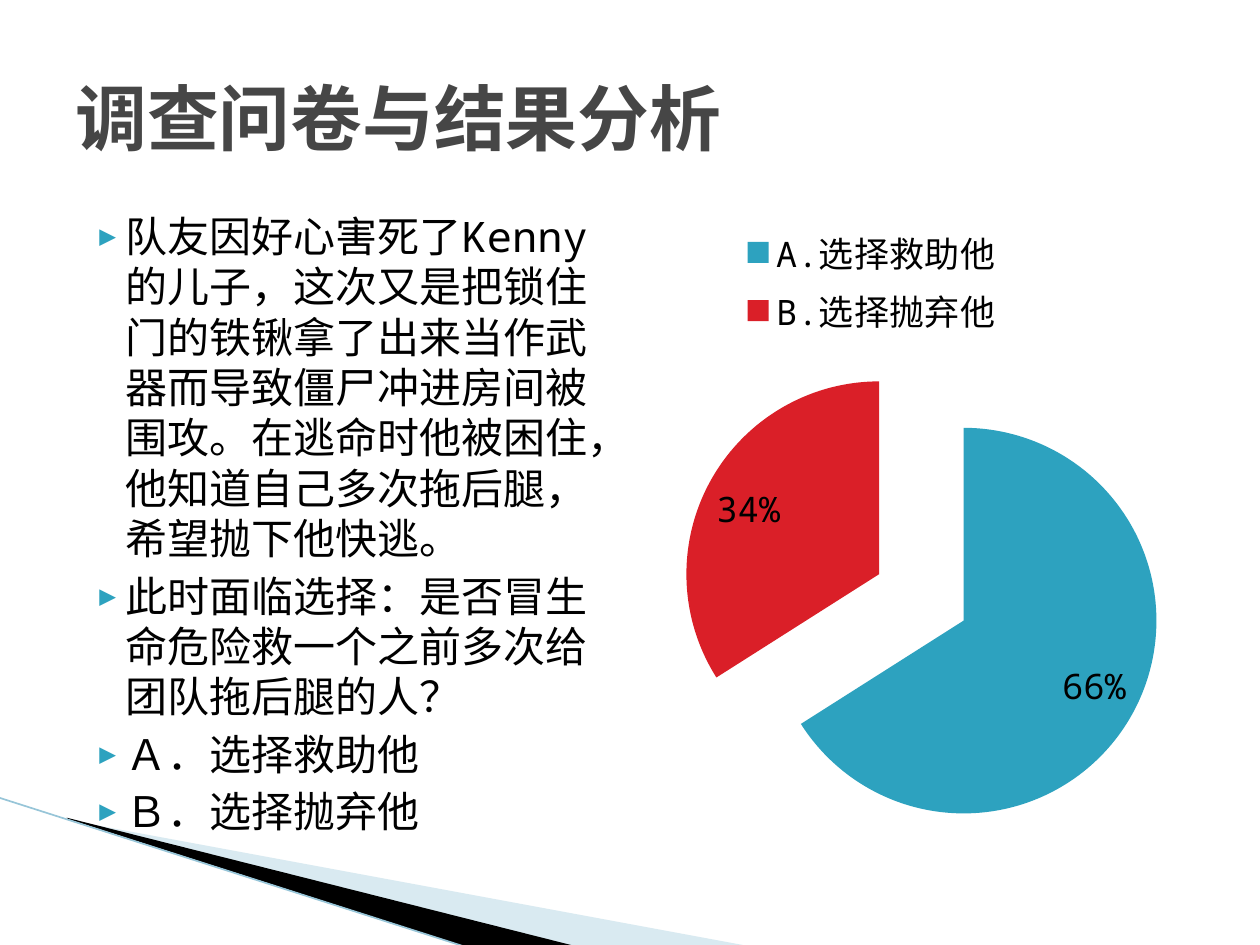
from lxml import etree
from pptx import Presentation
from pptx.chart.data import CategoryChartData
from pptx.dml.color import RGBColor
from pptx.enum.chart import XL_CHART_TYPE, XL_LABEL_POSITION, XL_LEGEND_POSITION
from pptx.enum.shapes import MSO_CONNECTOR
from pptx.enum.text import MSO_ANCHOR
from pptx.oxml import parse_xml
from pptx.oxml.ns import nsdecls, qn
from pptx.util import Inches, Pt

PIE = XL_CHART_TYPE.PIE
LEGEND_TOP = XL_LEGEND_POSITION.TOP
LABEL_INSIDE = XL_LABEL_POSITION.INSIDE_END
STRAIGHT = MSO_CONNECTOR.STRAIGHT
MIDDLE, TOP = MSO_ANCHOR.MIDDLE, MSO_ANCHOR.TOP

FONT = "Noto Sans Mono"
COLORS = {
    "title": "464646",
    "text": "000000",
    "teal": "2DA2BF",
    "red": "DA1F28",
    "wedge": "A0CBDC",
    "edge": "97C5D8",
}
BODY = [
    "队友因好心害死了Kenny的儿子，这次又是把锁住门的铁锹拿了出来当作武器而导致僵尸冲进房间被围攻。"
    "在逃命时他被困住，他知道自己多次拖后腿，希望抛下他快逃。",
    "此时面临选择：是否冒生命危险救一个之前多次给团队拖后腿的人？",
    "Ａ．选择救助他",
    "Ｂ．选择抛弃他",
]
ANSWERS = {"A.选择救助他": 66, "B.选择抛弃他": 34}


def rgb(name):
    return RGBColor.from_string(COLORS[name])


def style_font(font, size, color, bold=False):
    font.name, font.size, font.bold = FONT, Pt(size), bold
    font.color.rgb = rgb(color)


def add_text_box(page, left, top, width, height, anchor):
    box = page.shapes.add_textbox(*map(Inches, (left, top, width, height)))
    box.text_frame.word_wrap = True
    box.text_frame.vertical_anchor = anchor
    return box.text_frame


def add_span(para, text, size, color, bold=False):
    span = para.add_run()
    span.text = text
    style_font(span.font, size, color, bold)
    east_asian = etree.SubElement(span.font._element, qn("a:ea"))
    east_asian.set("typeface", FONT)


def add_bullet(para):
    props = para._p.get_or_add_pPr()
    props.set("marL", str(Inches(0.4)))
    props.set("indent", str(Inches(-0.28)))
    color = etree.SubElement(props, qn("a:buClr"))
    etree.SubElement(color, qn("a:srgbClr")).set("val", COLORS["teal"])
    etree.SubElement(props, qn("a:buSzPct")).set("val", "68000")
    etree.SubElement(props, qn("a:buFont")).set("typeface", FONT)
    etree.SubElement(props, qn("a:buChar")).set("char", "▶")


def add_wedge(page, points, color, opacity=100):
    first, *others = [(Inches(x), Inches(y)) for x, y in points]
    builder = page.shapes.build_freeform(*first)
    builder.add_line_segments(others, close=True)
    wedge = builder.convert_to_shape()
    wedge.shadow.inherit = False
    wedge.fill.solid()
    wedge.fill.fore_color.rgb = rgb(color)
    wedge.line.fill.background()
    if opacity < 100:
        fill_color = wedge._element.spPr.find(".//" + qn("a:srgbClr"))
        etree.SubElement(fill_color, qn("a:alpha")).set("val", str(opacity * 1000))


def add_edge(page, start, end, color, width):
    edge = page.shapes.add_connector(STRAIGHT, *map(Inches, (*start, *end)))
    edge.line.color.rgb = rgb(color)
    edge.line.width = Pt(width)
    etree.SubElement(edge._element.spPr, qn("a:effectLst"))


def make_layout(left, top, width, height, inner=False):
    """Manual chart layout, in fractions of the chart area."""
    target = '<c:layoutTarget val="inner"/>' if inner else ""
    return parse_xml(
        f'<c:layout {nsdecls("c")}><c:manualLayout>{target}'
        '<c:xMode val="edge"/><c:yMode val="edge"/>'
        f'<c:x val="{left}"/><c:y val="{top}"/>'
        f'<c:w val="{width}"/><c:h val="{height}"/>'
        "</c:manualLayout></c:layout>"
    )


def add_pie(page, left, top, width, height):
    data = CategoryChartData()
    data.categories = list(ANSWERS)
    data.add_series("Series 1", list(ANSWERS.values()))
    frame = page.shapes.add_chart(PIE, *map(Inches, (left, top, width, height)), data)
    chart = frame.chart
    chart.has_title = False
    style_font(chart.font, 18, "text")

    # Slices, pulled apart
    plot = chart.plots[0]
    plot.vary_by_categories = True
    series = plot.series[0]
    for index, color in enumerate(("teal", "red")):
        fill = series.points[index].format.fill
        fill.solid()
        fill.fore_color.rgb = rgb(color)
    explosion = parse_xml(f'<c:explosion {nsdecls("c")} val="25"/>')
    series._element.find(qn("c:dPt")).addprevious(explosion)

    # Percent labels
    plot.has_data_labels = True
    labels = plot.data_labels
    labels.show_percentage = True
    labels.show_value = False
    labels.position = LABEL_INSIDE
    style_font(labels.font, 20, "text")

    # Legend stacked above the pie
    chart.has_legend = True
    legend = chart.legend
    legend.position = LEGEND_TOP
    legend.include_in_layout = False
    style_font(legend.font, 20, "text")
    for old in legend._element.findall(qn("c:layout")):
        legend._element.remove(old)
    legend._element.find(qn("c:legendPos")).addnext(make_layout(0.17, 0.02, 0.5, 0.19))

    area = chart._chartSpace.chart.plotArea
    for old in area.findall(qn("c:layout")):
        area.remove(old)
    area.insert(0, make_layout(0.09, 0.23, 0.83, 0.74, inner=True))


def main():
    deck = Presentation()
    deck.slide_width, deck.slide_height = Inches(10), Inches(7.5)
    page = deck.slides.add_slide(deck.slide_layouts[6])

    # Corner decoration
    add_wedge(page, [(0.55, 6.51), (5.95, 7.51), (4.56, 7.51), (0.55, 6.5)], "wedge", 40)
    add_wedge(page, [(0.53, 6.49), (4.57, 7.51), (3.72, 7.52), (0.54, 6.5)], "text")
    add_edge(page, (-0.01, 6.33), (3.71, 7.52), "edge", 0.95)

    # Title
    title = add_text_box(page, 0.5, 0.3, 9, 1.25, MIDDLE)
    add_span(title.paragraphs[0], "调查问卷与结果分析", 41, "title", bold=True)

    # Question and choices
    body = add_text_box(page, 0.5, 1.62, 4.42, 4.95, TOP)
    for index, text in enumerate(BODY):
        para = body.add_paragraph() if index else body.paragraphs[0]
        add_bullet(para)
        if index:
            para.space_before = Pt(4)
        add_span(para, text, 24, "text")

    # Survey result
    add_pie(page, 4.97, 1.64, 4.64, 5.17)
    deck.save("out.pptx")


if __name__ == "__main__":
    main()
